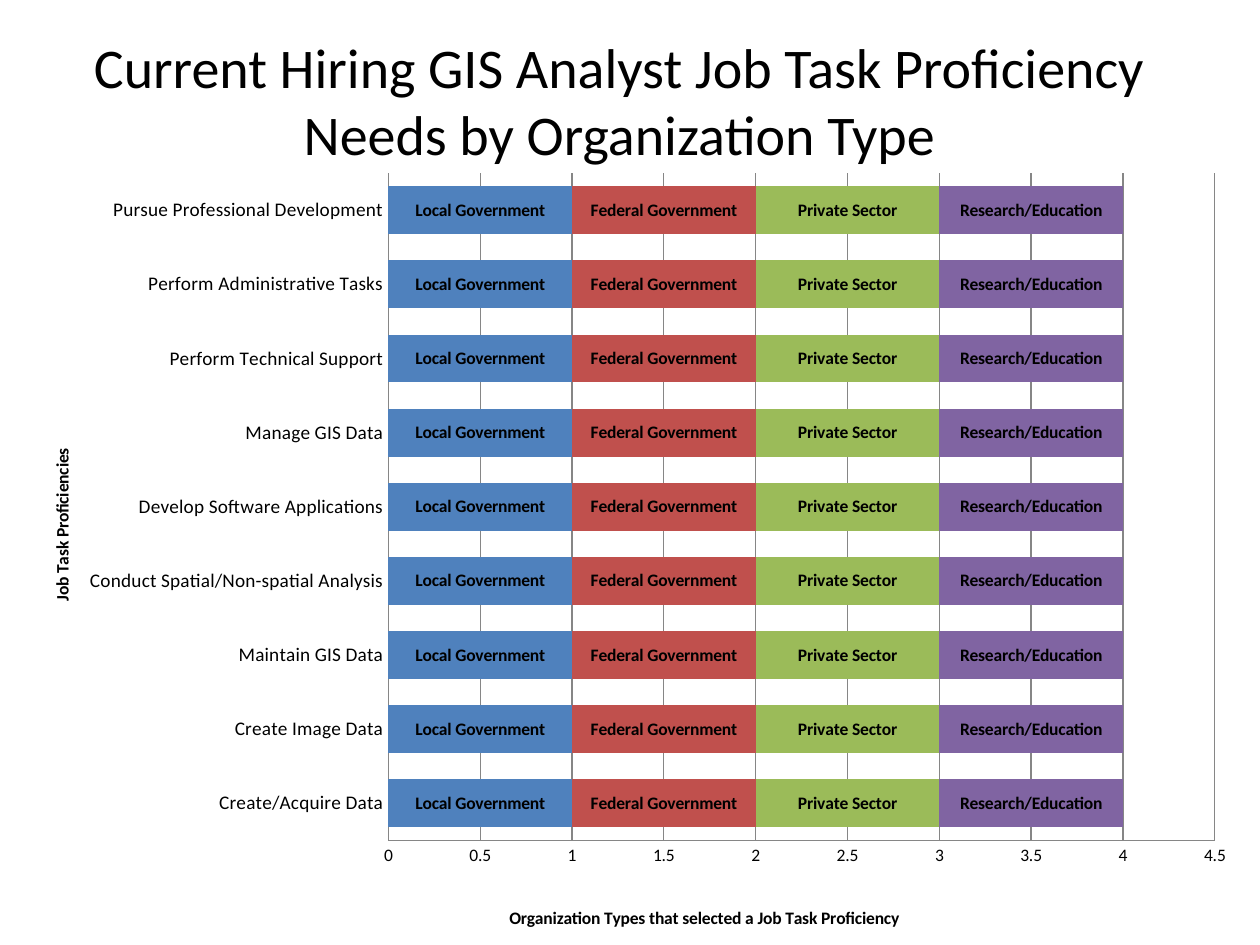
"""Build the slide on GIS analyst job task needs by organization type."""
from pptx import Presentation
from pptx.chart.data import CategoryChartData
from pptx.dml.color import RGBColor
from pptx.enum.chart import XL_CHART_TYPE, XL_LABEL_POSITION, XL_TICK_MARK
from pptx.enum.text import MSO_ANCHOR, PP_ALIGN
from pptx.oxml import parse_xml
from pptx.oxml.ns import nsdecls, qn
from pptx.util import Cm, Pt

BAR_STACKED = XL_CHART_TYPE.BAR_STACKED
LABEL_CENTER = XL_LABEL_POSITION.CENTER
NO_TICK = XL_TICK_MARK.NONE
MIDDLE = MSO_ANCHOR.MIDDLE
CENTER = PP_ALIGN.CENTER

BLACK = RGBColor(0x00, 0x00, 0x00)
GRAY = RGBColor(0x86, 0x86, 0x86)
BLUE = RGBColor(0x4F, 0x81, 0xBD)
RED = RGBColor(0xC0, 0x50, 0x4D)
GREEN = RGBColor(0x9B, 0xBB, 0x59)
PURPLE = RGBColor(0x80, 0x64, 0xA2)

ORGANIZATIONS = {
    "Local Government": BLUE,
    "Federal Government": RED,
    "Private Sector": GREEN,
    "Research/Education": PURPLE,
}
TASKS = [
    "Create/Acquire Data",
    "Create Image Data",
    "Maintain GIS Data",
    "Conduct Spatial/Non-spatial Analysis",
    "Develop Software Applications",
    "Manage GIS Data",
    "Perform Technical Support",
    "Perform Administrative Tasks",
    "Pursue Professional Development",
]


def set_format(target, values):
    for name, value in values.items():
        setattr(target, name, value)


def place(parent, index, **fractions):
    for layout in parent.findall(qn("c:layout")):
        parent.remove(layout)
    inner = '<c:layoutTarget val="inner"/>' if "w" in fractions else ""
    modes = "".join(f'<c:{key}Mode val="edge"/>' for key in "xy")
    sizes = "".join(f'<c:{key} val="{value}"/>' for key, value in fractions.items())
    parent.insert(index, parse_xml(
        f'<c:layout {nsdecls("c")}><c:manualLayout>{inner}{modes}{sizes}'
        "</c:manualLayout></c:layout>"))


class SlideWriter:
    """Holds the style and the current slide."""

    def __init__(self, slide, font_name="Calibri"):
        self.slide = slide
        self.font_name = font_name

    def style(self, font, size, bold=False):
        set_format(font, {"name": self.font_name, "size": Pt(size), "bold": bold})
        font.color.rgb = BLACK

    def title(self, text, left, top, width, height):
        heading = self.slide.shapes.title
        set_format(heading, {"left": left, "top": top, "width": width, "height": height})
        frame = heading.text_frame
        set_format(frame, {"text": text, "vertical_anchor": MIDDLE, "word_wrap": True})
        frame.paragraphs[0].alignment = CENTER
        self.style(frame.paragraphs[0].runs[0].font, 32)

    def axis(self, axis, text, size, x, y):
        set_format(axis, {"major_tick_mark": NO_TICK, "minor_tick_mark": NO_TICK})
        self.style(axis.tick_labels.font, size)
        axis.format.line.color.rgb = GRAY
        frame = axis.axis_title.text_frame
        frame.text = text
        self.style(frame.paragraphs[0].runs[0].font, 10, bold=True)
        place(axis.axis_title.element if hasattr(axis.axis_title, "element")
              else axis.axis_title._element, 1, x=x, y=y)

    def stacked_bars(self, tasks, organizations, left, top, width, height):
        needs = CategoryChartData(number_format="General")
        needs.categories = tasks
        for organization in organizations:
            needs.add_series(organization, [1] * len(tasks))
        chart = self.slide.shapes.add_chart(
            BAR_STACKED, left, top, width, height, needs).chart
        set_format(chart, {"has_legend": False, "has_title": False})
        self.style(chart.font, 10)
        plot = chart.plots[0]
        set_format(plot, {"gap_width": 55, "overlap": 100, "vary_by_categories": False})
        for series, color in zip(plot.series, organizations.values()):
            series.format.fill.solid()
            series.format.fill.fore_color.rgb = color
            labels = series.data_labels
            set_format(labels, {"show_series_name": True, "show_value": False,
                                "position": LABEL_CENTER})
            self.style(labels.font, 10, bold=True)
        self.axis(chart.category_axis, "Job Task Proficiencies", 11, 0.03, 0.37)
        counts = chart.value_axis
        self.axis(counts, "Organization Types that selected a Job Task Proficiency",
                  10, 0.4, 0.96)
        set_format(counts, {"minimum_scale": 0, "maximum_scale": 4.5, "major_unit": 0.5,
                            "has_major_gridlines": True})
        counts.major_gridlines.format.line.color.rgb = GRAY
        plot_area = chart.element.find(".//" + qn("c:plotArea"))
        place(plot_area, 0, x=0.305, y=0.02, w=0.667, h=0.859)


def main():
    deck = Presentation()
    set_format(deck, {"slide_width": Cm(25.4), "slide_height": Cm(19.05)})
    writer = SlideWriter(deck.slides.add_slide(deck.slide_layouts[5]))
    writer.title("Current Hiring GIS Analyst Job Task Proficiency Needs by Organization Type",
                 Cm(1.06), Cm(0.42), Cm(22.86), Cm(3.18))
    writer.stacked_bars(TASKS, ORGANIZATIONS, Cm(0.21), Cm(3.18), Cm(24.98), Cm(15.66))
    deck.save("out.pptx")


if __name__ == "__main__":
    main()
